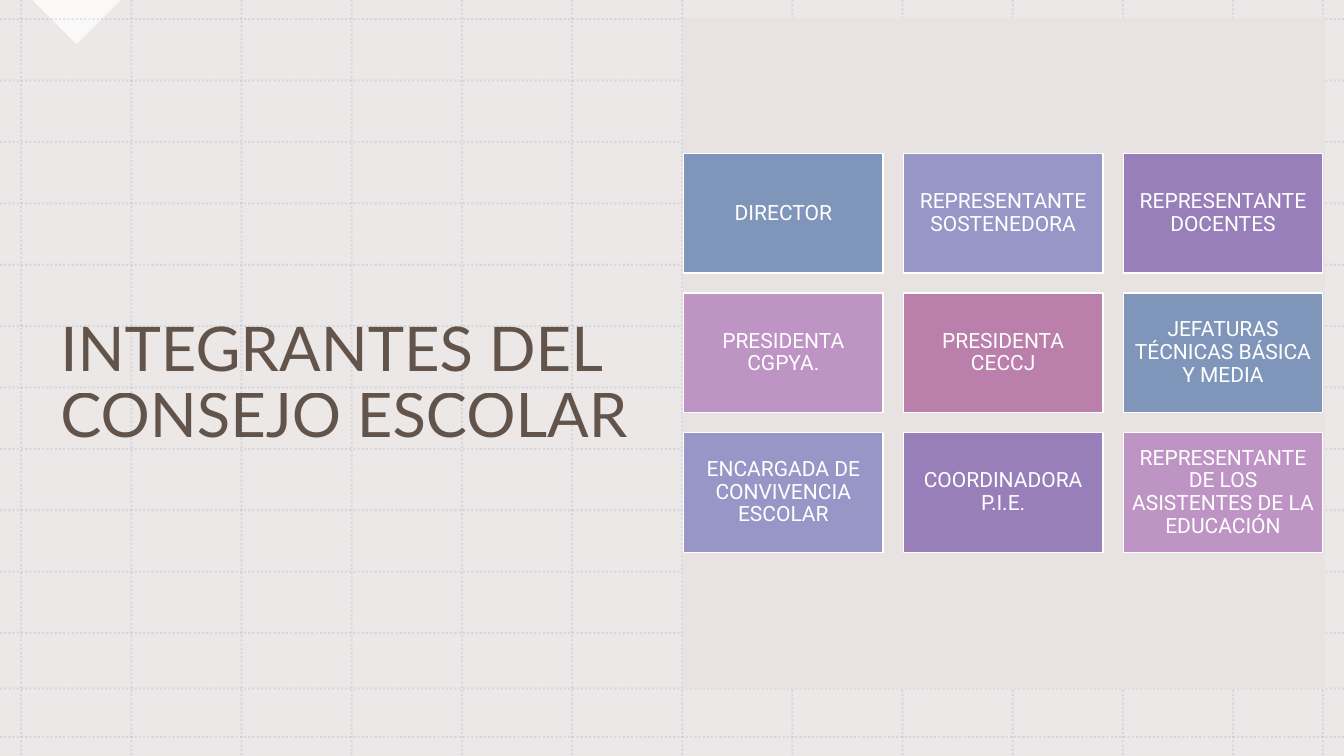
from dataclasses import dataclass

from pptx import Presentation
from pptx.dml.color import RGBColor
from pptx.enum.dml import MSO_LINE
from pptx.enum.shapes import MSO_CONNECTOR, MSO_SHAPE
from pptx.enum.text import MSO_ANCHOR, PP_ALIGN
from pptx.oxml.ns import qn
from pptx.oxml.xmlchemy import OxmlElement
from pptx.util import Inches, Pt

RECTANGLE, CORNER = MSO_SHAPE.RECTANGLE, MSO_SHAPE.RIGHT_TRIANGLE
STRAIGHT, DOTTED = MSO_CONNECTOR.STRAIGHT, MSO_LINE.ROUND_DOT
MIDDLE, LEFT, CENTER = MSO_ANCHOR.MIDDLE, PP_ALIGN.LEFT, PP_ALIGN.CENTER
WIDTH, HEIGHT = 13.33, 7.5


@dataclass(frozen=True)
class Theme:
    sand: str = "E8E3E2"
    white: str = "FFFFFF"
    brown: str = "413024"
    blue: str = "7F96BA"
    lavender: str = "9796C6"
    purple: str = "997FBA"
    orchid: str = "BE94C5"
    rose: str = "BA7FAA"
    title_font: str = "Lato"
    member_font: str = "Roboto"
    title_size: float = 44
    member_size: float = 15
    ruling_width: float = 1.5
    border_width: float = 1
    line_spacing: float = 0.9


@dataclass(frozen=True)
class Box:
    left: float
    top: float
    width: float
    height: float

    def emu(self) -> list:
        return [Inches(v) for v in (self.left, self.top, self.width, self.height)]


@dataclass(frozen=True)
class Member:
    role: str
    color: str


THEME = Theme()

# Council members, row by row
COLUMNS, ROWS = 3, 3
MEMBERS = [
    Member("DIRECTOR", THEME.blue),
    Member("REPRESENTANTE SOSTENEDORA", THEME.lavender),
    Member("REPRESENTANTE DOCENTES", THEME.purple),
    Member("PRESIDENTA CGPYA.", THEME.orchid),
    Member("PRESIDENTA CECCJ", THEME.rose),
    Member("JEFATURAS TÉCNICAS BÁSICA Y MEDIA", THEME.blue),
    Member("ENCARGADA DE CONVIVENCIA ESCOLAR", THEME.lavender),
    Member("COORDINADORA P.I.E.", THEME.purple),
    Member("REPRESENTANTE DE LOS ASISTENTES DE LA EDUCACIÓN", THEME.orchid),
]


def spread(first: float, last: float, count: int) -> list[float]:
    """Evenly spaced positions from first to last."""
    return [first + (last - first) * i / (count - 1) for i in range(count)]


def set_opacity(element, percent: int) -> None:
    for color in element.iter(qn("a:srgbClr")):
        alpha = OxmlElement("a:alpha")
        alpha.set("val", str(percent * 1000))
        color.append(alpha)


def add_block(slide, kind, box: Box, color: str, opacity: int = 100):
    block = slide.shapes.add_shape(kind, *box.emu())
    block.shadow.inherit = False
    block.fill.solid()
    block.fill.fore_color.rgb = RGBColor.from_string(color)
    block.line.fill.background()
    if opacity < 100:
        set_opacity(block.element, opacity)
    return block


def add_ruling(slide, x1: float, y1: float, x2: float, y2: float) -> None:
    ruling = slide.shapes.add_connector(
        STRAIGHT, Inches(x1), Inches(y1), Inches(x2), Inches(y2))
    ruling.line.color.rgb = RGBColor.from_string(THEME.blue)
    ruling.line.width = Pt(THEME.ruling_width)
    ruling.line.dash_style = DOTTED
    ruling.element.spPr.append(OxmlElement("a:effectLst"))
    set_opacity(ruling.element, 20)


def write(frame, text: str, font: str, size: float, color: str, align) -> None:
    frame.word_wrap = True
    frame.vertical_anchor = MIDDLE
    paragraph = frame.paragraphs[0]
    paragraph.alignment = align
    paragraph.line_spacing = THEME.line_spacing
    run = paragraph.add_run()
    run.text = text
    run.font.name = font
    run.font.size = Pt(size)
    run.font.color.rgb = RGBColor.from_string(color)


def add_member(slide, member: Member, box: Box) -> None:
    tile = add_block(slide, RECTANGLE, box, member.color)
    tile.line.color.rgb = RGBColor.from_string(THEME.white)
    tile.line.width = Pt(THEME.border_width)
    frame = tile.text_frame
    frame.margin_left = frame.margin_right = Inches(0.06)
    frame.margin_top = frame.margin_bottom = Inches(0.06)
    write(frame, member.role, THEME.member_font, THEME.member_size,
          THEME.white, CENTER)


def main() -> None:
    deck = Presentation()
    deck.slide_width, deck.slide_height = Inches(WIDTH), Inches(HEIGHT)
    slide = deck.slides.add_slide(deck.slide_layouts[6])

    # Sand wash and corner accent
    add_block(slide, RECTANGLE, Box(0, 0, WIDTH, HEIGHT), THEME.sand, 80)
    accent = add_block(slide, CORNER, Box(0.45, -0.31, 0.62, 0.62), THEME.white, 75)
    accent.rotation = 315

    # Dotted rulings: even grid plus closing margins
    for x in spread(0.21, 12.23, 12) + [13.12]:
        add_ruling(slide, x, 0, x, HEIGHT)
    for y in spread(0.19, 6.28, 11) + [6.83, 7.31]:
        add_ruling(slide, 0, y, WIDTH, y)

    # Title
    title = slide.shapes.add_textbox(*Box(0.5, 0.79, 6.07, 6.05).emu())
    write(title.text_frame, "INTEGRANTES DEL CONSEJO ESCOLAR",
          THEME.title_font, THEME.title_size, THEME.brown, LEFT)
    set_opacity(title.element, 80)

    # Panel with the member tiles
    add_block(slide, RECTANGLE, Box(6.77, 0.18, 6.37, 6.65), THEME.sand)
    places = [Box(left, top, 1.98, 1.19)
              for top in spread(1.52, 4.29, ROWS)
              for left in spread(6.78, 11.14, COLUMNS)]
    for member, place in zip(MEMBERS, places):
        add_member(slide, member, place)

    deck.save("out.pptx")


if __name__ == "__main__":
    main()
